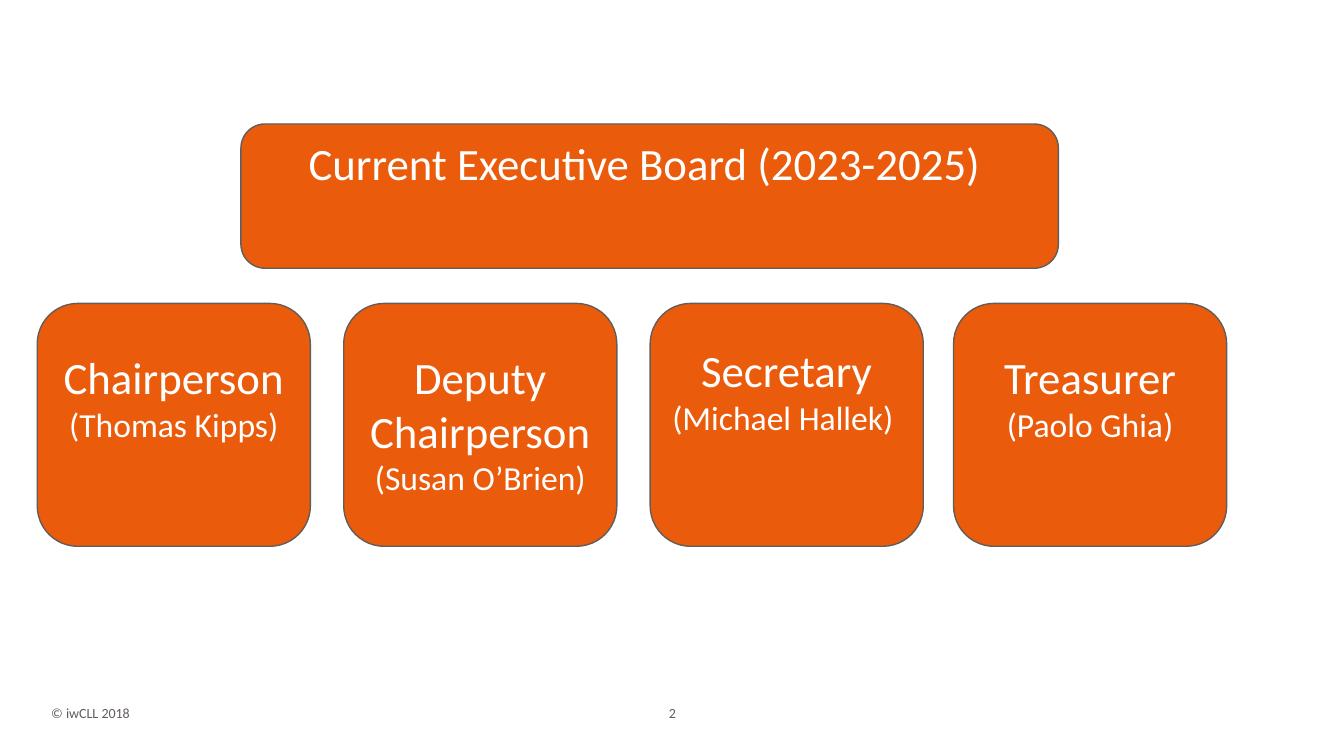
from pptx import Presentation
from pptx.dml.color import RGBColor
from pptx.enum import shapes, text
from pptx.util import Pt

# Content: left edge, top inset, role, holder
MEMBERS = [
    (26.6, 24.6, "Chairperson ", "(Thomas Kipps)"),
    (245.5, 24.6, "Deputy Chairperson ", "(Susan O’Brien)"),
    (464.4, 19.7, "Secretary", "(Michael Hallek) "),
    (681.1, 24.6, "Treasurer", "(Paolo Ghia)"),
]
TITLE = "Current Executive Board (2023-2025) "
COPYRIGHT = "© iwCLL 2018"
PAGE_NUMBER = "2"

# Format
FONT = "Calibri"
ORANGE = RGBColor(0xEA, 0x5B, 0x0B)
GREY = RGBColor(0x62, 0x5D, 0x5B)
WHITE = RGBColor(0xFF, 0xFF, 0xFF)
CARD_TOP, CARD_WIDTH, CARD_HEIGHT = 216.7, 195.1, 173.5
FOOTER_TOP, FOOTER_HEIGHT = 499.7, 20.9
ROLE_SIZE, NAME_SIZE, FOOTER_SIZE = 32, 24, 10


def write(box, lines, color=WHITE, align=text.PP_ALIGN.CENTER, inset=3.6):
    """Fill a box with (words, size) lines, one paragraph each."""
    frame = box.text_frame
    frame.word_wrap = True
    frame.vertical_anchor = text.MSO_ANCHOR.TOP
    frame.margin_top = Pt(inset)
    for index, (words, size) in enumerate(lines):
        para = frame.add_paragraph() if index else frame.paragraphs[0]
        para.alignment = align
        span = para.add_run()
        span.text = words
        span.font.name = FONT
        span.font.size = Pt(size)
        span.font.color.rgb = color


def add_card(page, left, top, width, height):
    card = page.shapes.add_shape(shapes.MSO_SHAPE.ROUNDED_RECTANGLE,
                                 Pt(left), Pt(top), Pt(width), Pt(height))
    card.shadow.inherit = False
    card.fill.solid()
    card.fill.fore_color.rgb = ORANGE
    card.line.color.rgb = GREY
    card.line.width = Pt(1)
    return card


def add_footer(page, left, width, words, align):
    box = page.shapes.add_textbox(Pt(left), Pt(FOOTER_TOP), Pt(width), Pt(FOOTER_HEIGHT))
    write(box, [(words, FOOTER_SIZE)], color=GREY, align=align)


def main():
    deck = Presentation()
    deck.slide_width, deck.slide_height = Pt(960), Pt(540)
    page = deck.slides.add_slide(deck.slide_layouts[6])

    # Footer
    add_footer(page, 424.8, 110.9, PAGE_NUMBER, text.PP_ALIGN.CENTER)
    add_footer(page, 29.5, 71.3, COPYRIGHT, text.PP_ALIGN.LEFT)

    # Title and board members
    write(add_card(page, 172.1, 88.6, 583.9, 103), [(TITLE, ROLE_SIZE)])
    for left, inset, role, holder in MEMBERS:
        card = add_card(page, left, CARD_TOP, CARD_WIDTH, CARD_HEIGHT)
        write(card, [(role, ROLE_SIZE), (holder, NAME_SIZE)], inset=inset)

    deck.save("out.pptx")


if __name__ == "__main__":
    main()
